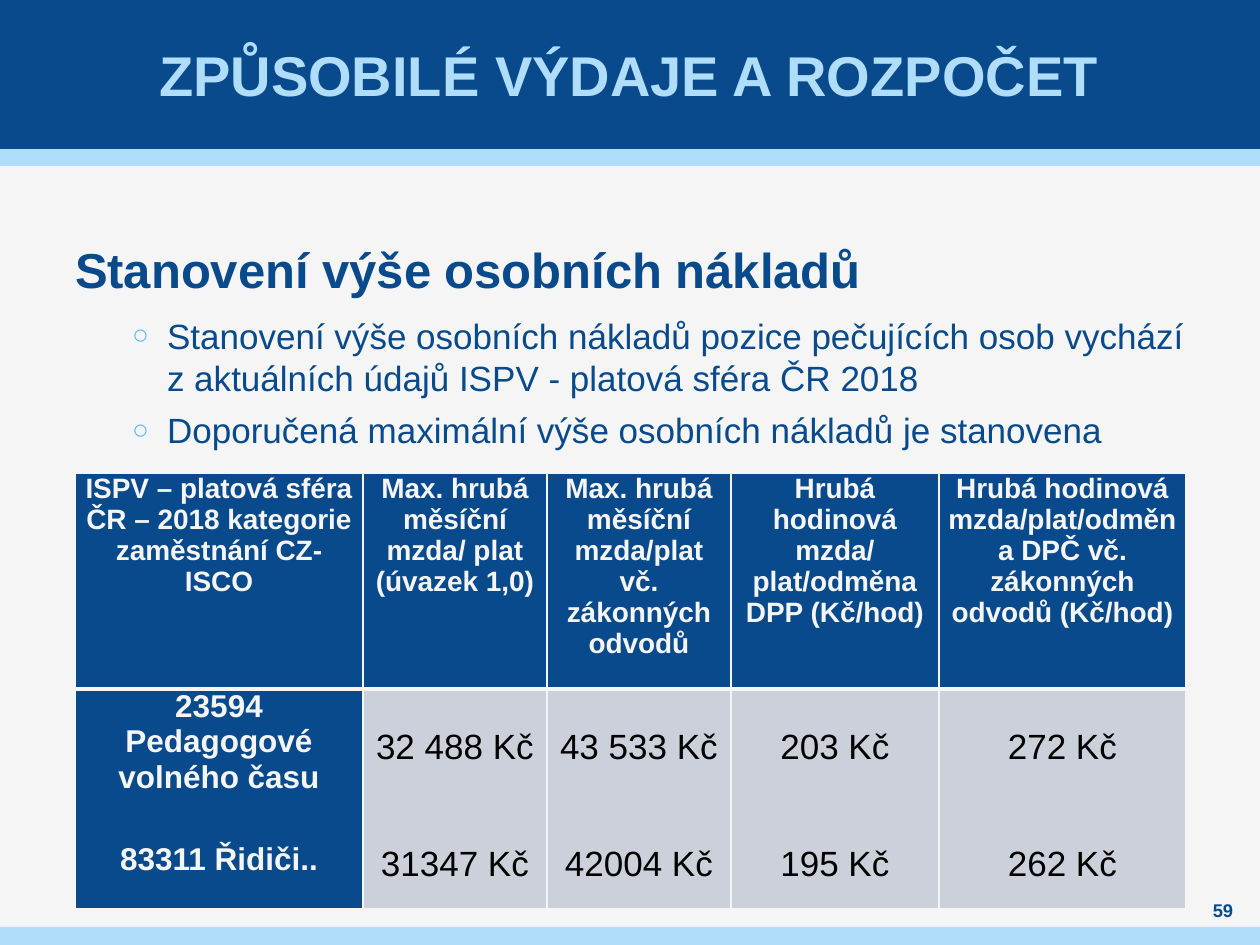
from lxml.etree import SubElement
from pptx import Presentation
from pptx.dml.color import RGBColor
from pptx.enum.shapes import MSO_SHAPE
from pptx.enum.text import MSO_ANCHOR, MSO_AUTO_SIZE, PP_ALIGN
from pptx.oxml.ns import qn
from pptx.util import Pt

PX = 914400 / 126
NAVY, SKY, PALE = "084A8B", "AFDDFA", "F5F5F5"


def px(*lengths):
    """Turn px lengths into a list of EMU."""
    return [round(n * PX) for n in lengths]


def write(p, text, size, color, bold=True, align=PP_ALIGN.CENTER):
    """Fill a paragraph and format its runs."""
    p.text = text
    p.alignment = align
    for r in p.runs:
        for name, value in {"name": "Arial", "size": Pt(size), "bold": bold}.items():
            setattr(r.font, name, value)
        r.font.color.rgb = RGBColor.from_string(color)


prs = Presentation()
prs.slide_width, prs.slide_height = px(1260, 945)
s = prs.slides.add_slide(prs.slide_layouts[1])
s.background.fill.solid()
s.background.fill.fore_color.rgb = RGBColor.from_string(PALE)

# Bands, placed behind the placeholders
bands = [(149, 17, SKY), (0, 149, NAVY), (927, 18, SKY)]
for i, (top, height, color) in enumerate(bands):
    sp = s.shapes.add_shape(MSO_SHAPE.RECTANGLE, *px(0, top, 1260, height))
    sp.shadow.inherit = False
    sp.fill.solid()
    sp.fill.fore_color.rgb = RGBColor.from_string(color)
    sp.line.fill.background()
    s.shapes._spTree.insert(2 + i, sp._element)

# Title, body and page number frames
title, body = s.shapes.title, s.placeholders[1]
number = s.shapes.add_textbox(0, 0, 0, 0)
frames = [
    (title, (49, 0, 1160, 149), 5, MSO_ANCHOR.MIDDLE),
    (body, (75, 248, 1111, 595), 0, MSO_ANCHOR.TOP),
    (number, (1191, 898, 64, 25), 0, MSO_ANCHOR.MIDDLE),
]
for sp, box, inset, anchor in frames:
    sp.left, sp.top, sp.width, sp.height = px(*box)
    tf = sp.text_frame
    tf.word_wrap = True
    tf.auto_size = MSO_AUTO_SIZE.NONE
    tf.vertical_anchor = anchor
    tf.margin_left, tf.margin_right = px(inset, inset)
    tf.margin_top = tf.margin_bottom = 0

write(title.text_frame.paragraphs[0], "ZPŮSOBILÉ VÝDAJE A ROZPOČET", 32, SKY)
write(number.text_frame.paragraphs[0], "59", 10.5, NAVY)

# Heading and bullets
lines = [
    (0, "Stanovení výše osobních nákladů"),
    (1, "Stanovení výše osobních nákladů pozice pečujících osob vychází "
        "z aktuálních údajů ISPV - platová sféra ČR 2018"),
    (1, "Doporučená maximální výše osobních nákladů je stanovena"),
]
tf = body.text_frame
for i, (level, text) in enumerate(lines):
    p = tf.add_paragraph() if i else tf.paragraphs[0]
    write(p, text, 20 if level else 28, NAVY, not level, PP_ALIGN.LEFT)
    p.level = level
    p.line_spacing = Pt(24 if level else 28.8)
    p.space_before = p.space_after = Pt(3 if level else 6)
    pPr = p._p.get_or_add_pPr()
    margin, indent = px(92, -35) if level else (0, 0)
    pPr.set("marL", str(margin))
    pPr.set("indent", str(indent))
    if level:
        color = SubElement(pPr, qn("a:buClr"))
        SubElement(color, qn("a:srgbClr"), val="5FBBF5")
        SubElement(pPr, qn("a:buSzPct"), val="80000")
        SubElement(pPr, qn("a:buFont"), typeface="Arial")
        SubElement(pPr, qn("a:buChar"), char="○")
    else:
        SubElement(pPr, qn("a:buNone"))

# Salary table: each cell lists its paragraphs
rows = [
    [["ISPV – platová sféra ČR – 2018 kategorie zaměstnání CZ-ISCO"],
     ["Max. hrubá měsíční mzda/ plat (úvazek 1,0)"],
     ["Max. hrubá měsíční mzda/plat vč. zákonných odvodů"],
     ["Hrubá hodinová mzda/ plat/odměna DPP (Kč/hod)"],
     ["Hrubá hodinová\vmzda/plat/odměna DPČ vč. zákonných odvodů (Kč/hod)"]],
    [["23594 Pedagogové volného času", "83311 Řidiči.."],
     ["32 488 Kč", "31347 Kč"],
     ["43 533 Kč", "42004 Kč"],
     ["203 Kč", "195 Kč"],
     ["272 Kč", "262 Kč"]],
]
table = s.shapes.add_table(2, 5, *px(75, 473, 1111, 436)).table
for column, width in zip(table.columns, px(288, 184, 184, 208, 247)):
    column.width = width
for row, height in zip(table.rows, px(216, 220)):
    row.height = height

for i, row in enumerate(rows):
    for j, texts in enumerate(row):
        cell = table.cell(i, j)
        value = i == 1 and j > 0
        cell.margin_left, cell.margin_right = px(9, 9)
        cell.margin_top, cell.margin_bottom = px(39 if value else 0, 0)
        cell.fill.solid()
        cell.fill.fore_color.rgb = RGBColor.from_string("CCD0DA" if value else NAVY)
        size = 20 if value else 18 if i else 16
        for k, text in enumerate(texts):
            p = cell.text_frame.add_paragraph() if k else cell.text_frame.paragraphs[0]
            write(p, text, size, "000000" if value else PALE, not value)
            if k:
                p.space_before = Pt(44.7 if value else 26.8)
        tcPr = cell._tc.get_or_add_tcPr()
        divider = "lnT" if i else "lnB"
        for n, side in enumerate(("lnL", "lnR", "lnT", "lnB")):
            ln = SubElement(tcPr, qn("a:" + side), w=str(Pt(3 if side == divider else 1)))
            SubElement(SubElement(ln, qn("a:solidFill")), qn("a:srgbClr"), val=PALE)
            tcPr.insert(n, ln)

prs.save("out.pptx")
